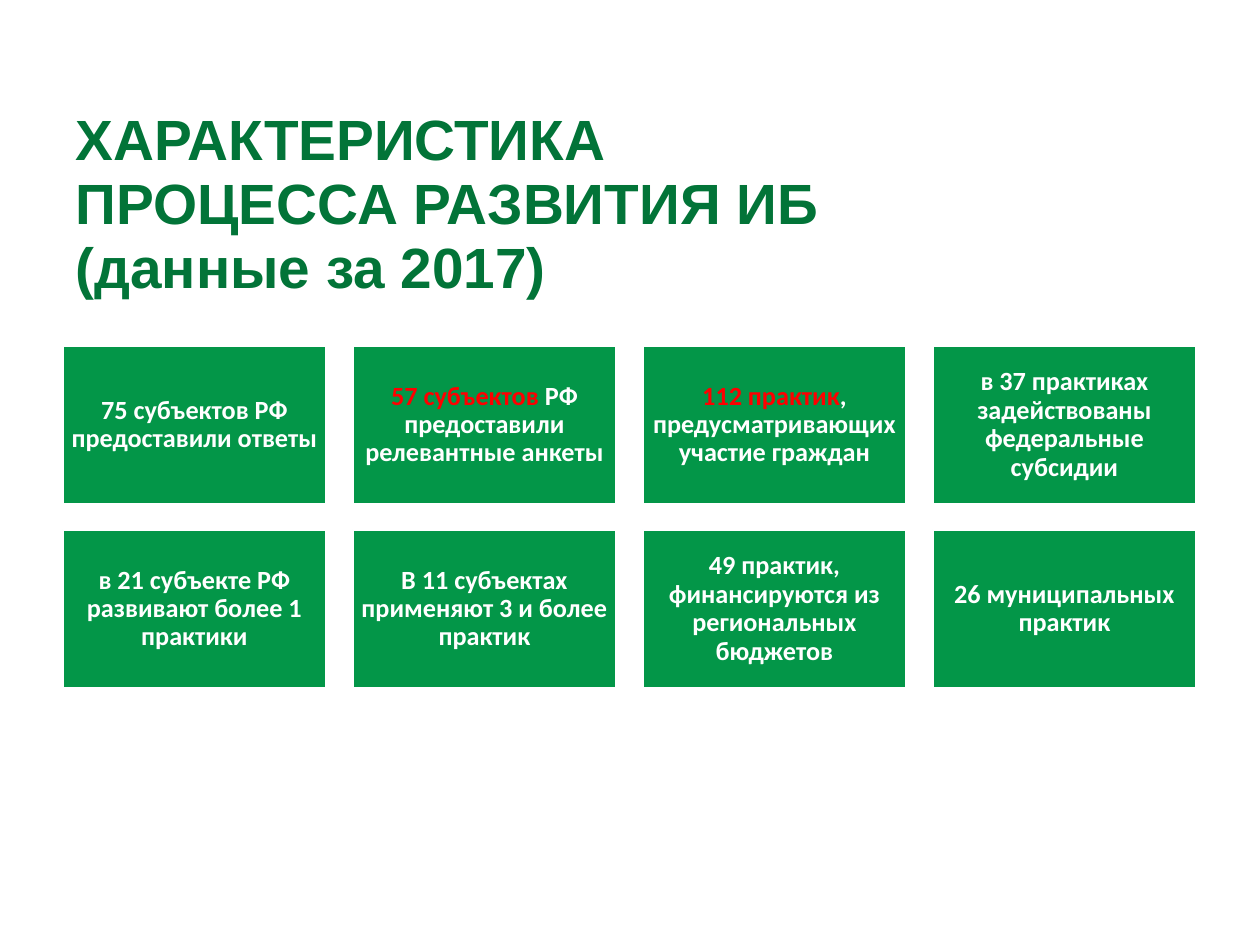
from dataclasses import dataclass

from pptx import Presentation
from pptx import util as u
from pptx.dml.color import RGBColor
from pptx.enum import shapes, text

PX = 914400 // 126  # EMU per px
LEFT = 63
GRID_TOP = 346
CARD_W, CARD_H = 263, 158
STEP_X, STEP_Y = 290, 184
COLUMNS = 4


@dataclass(frozen=True)
class Theme:
    title: str = "027438"
    card: str = "039648"
    light: str = "FFFFFF"
    accent: str = "FF0000"
    title_font: str = "Arial"
    card_font: str = "Calibri"
    title_size: float = 32.4
    card_size: float = 15


class Deck:
    def __init__(self, theme):
        self.theme = theme
        self.prs = Presentation()
        self.prs.slide_width = u.Inches(10)
        self.prs.slide_height = u.Inches(7.5)
        self.s = self.prs.slides.add_slide(self.prs.slide_layouts[5])

    def run(self, p, words, font, size, color):
        r = p.add_run()
        r.text = words
        r.font.name = font
        r.font.size = u.Pt(size)
        r.font.bold = True
        r.font.color.rgb = RGBColor.from_string(color)

    def frame(self, sp, align, spacing):
        """Prepare the text frame of a shape and return its first paragraph."""
        tf = sp.text_frame
        tf.word_wrap = True
        tf.auto_size = text.MSO_AUTO_SIZE.NONE
        tf.vertical_anchor = text.MSO_ANCHOR.MIDDLE
        p = tf.paragraphs[0]
        p.alignment = align
        p.line_spacing = spacing
        return p

    def title(self, lines, x, y, w, h):
        t = self.theme
        sp = self.s.shapes.title
        sp.left, sp.top, sp.width, sp.height = (v * PX for v in (x, y, w, h))
        p = self.frame(sp, text.PP_ALIGN.LEFT, 0.94)
        for i, line in enumerate(lines):
            if i:
                p.add_line_break()
            self.run(p, line, t.title_font, t.title_size, t.title)

    def card(self, accent, words, x, y):
        """Add a green box whose text opens with an optional accented part."""
        t = self.theme
        sp = self.s.shapes.add_shape(
            shapes.MSO_SHAPE.RECTANGLE, x * PX, y * PX, CARD_W * PX, CARD_H * PX)
        sp.shadow.inherit = False
        sp.fill.solid()
        sp.fill.fore_color.rgb = RGBColor.from_string(t.card)
        sp.line.color.rgb = RGBColor.from_string(t.light)
        sp.line.width = u.Pt(1)
        tf = sp.text_frame
        tf.margin_left = tf.margin_right = tf.margin_top = tf.margin_bottom = 7 * PX
        p = self.frame(sp, text.PP_ALIGN.CENTER, 0.9)
        for part, color in ((accent, t.accent), (words, t.light)):
            if part:
                self.run(p, part, t.card_font, t.card_size, color)


CARDS = [
    ("", "75 субъектов РФ предоставили ответы"),
    ("57 субъектов ", "РФ предоставили релевантные анкеты"),
    ("112 практик", ", предусматривающих участие граждан"),
    ("", "в 37 практиках задействованы федеральные субсидии"),
    ("", "в 21 субъекте РФ развивают более 1 практики"),
    ("", "В 11 субъектах применяют 3 и более практик"),
    ("", "49 практик, финансируются из региональных бюджетов"),
    ("", "26 муниципальных практик"),
]


def main():
    deck = Deck(Theme())
    deck.title(["ХАРАКТЕРИСТИКА ПРОЦЕССА РАЗВИТИЯ ИБ", "(данные за 2017)"],
               LEFT, 146, 864, 118)
    for i, (accent, words) in enumerate(CARDS):
        row, col = divmod(i, COLUMNS)
        deck.card(accent, words, LEFT + col * STEP_X, GRID_TOP + row * STEP_Y)
    deck.prs.save("out.pptx")


if __name__ == "__main__":
    main()
